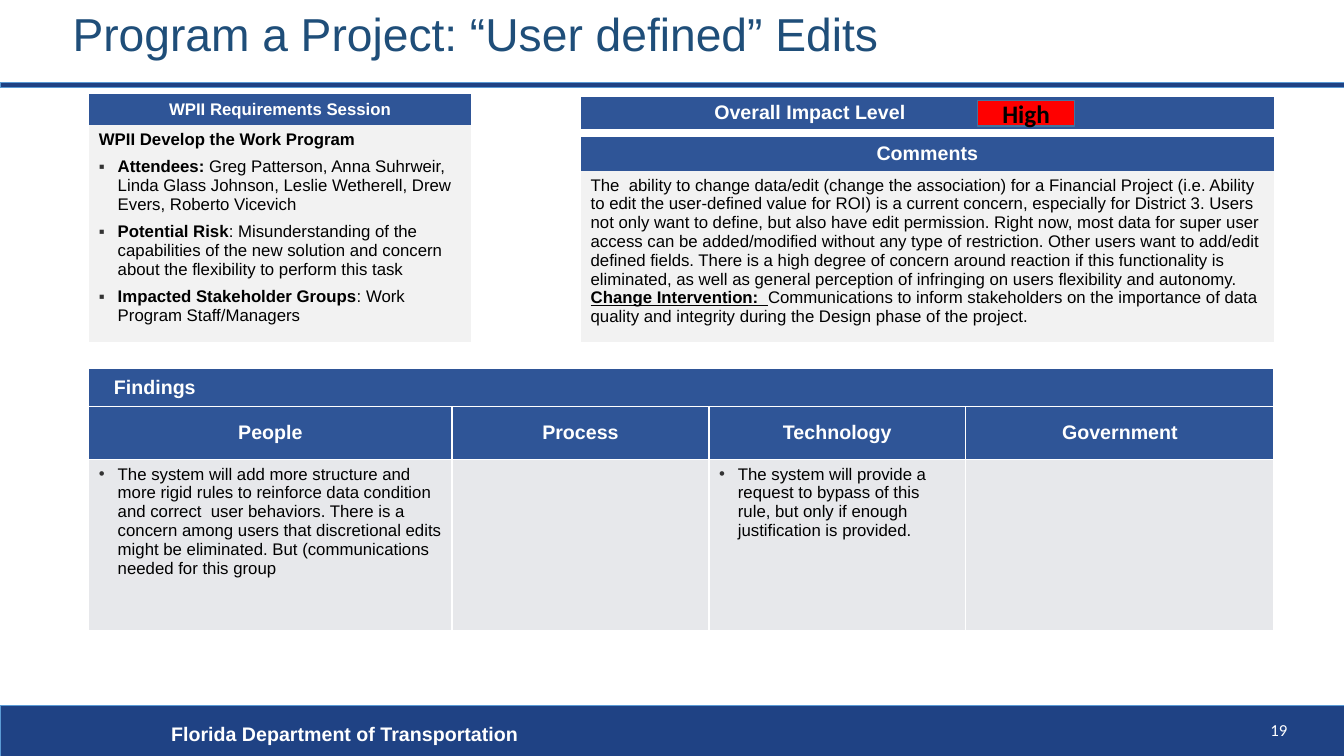
from lxml.etree import SubElement
from pptx import Presentation
from pptx.dml.color import RGBColor
from pptx.enum.shapes import MSO_SHAPE
from pptx.enum.text import MSO_ANCHOR, MSO_AUTO_SIZE, PP_ALIGN
from pptx.oxml import parse_xml
from pptx.oxml.ns import nsdecls, qn
from pptx.util import Pt

# Content
TITLE = "Program a Project: “User defined” Edits"
FOOTER, PAGE_NUMBER = "Florida Department of Transportation", "19"
IMPACT_LABEL, IMPACT_LEVEL = "Overall Impact Level", "High"
SESSION_HEAD = "WPII Requirements Session"
SESSION_TOPIC = "WPII Develop the Work Program"
SESSION_POINTS = [
    ("Attendees: ", "Greg Patterson, Anna Suhrweir, Linda Glass Johnson, Leslie Wetherell, "
     "Drew Evers, Roberto Vicevich"),
    ("Potential Risk", ": Misunderstanding of the capabilities of the new solution and concern "
     "about the flexibility to perform this task"),
    ("Impacted Stakeholder Groups", ": Work Program Staff/Managers"),
]
COMMENTS_HEAD = "Comments"
CONCERN = (
    "The  ability to change data/edit (change the association) for a Financial Project (i.e. "
    "Ability to edit the user-defined value for ROI) is a current concern, especially for "
    "District 3. Users not only want to define, but also have edit permission. Right now, most "
    "data for super user access can be added/modified without any type of restriction. Other "
    "users want to add/edit defined fields. There is a high degree of concern around reaction if "
    "this functionality is eliminated, as well as general perception of infringing on users "
    "flexibility and autonomy. ")
INTERVENTION_LABEL = "Change Intervention:  "
INTERVENTION = ("Communications to inform stakeholders on the importance of data quality and "
                "integrity during the Design phase of the project.")
FINDINGS_HEAD = "Findings"
FINDINGS = {
    "People": "The system will add more structure and more rigid rules to reinforce data "
              "condition and correct  user behaviors. There is a concern among users that "
              "discretional edits might be eliminated. But (communications needed for this group",
    "Process": "",
    "Technology": "The system will provide a request to bypass of this rule, but only if enough "
                  "justification is provided.",
    "Government": "",
}

# Formats
NAVY, BLUE, LIGHT, GREY = "1F4284", "2F5597", "F2F2F2", "E7E8EB"
HEAD = {"size": Pt(14), "name": "Arial", "bold": True, "color": "FFFFFF"}
SMALL_HEAD = {**HEAD, "size": Pt(12)}
BODY = {"size": Pt(12), "name": "Arial", "bold": False, "color": "000000"}
STRONG = {**BODY, "bold": True}
NO_STYLE = "{2D5ABB26-0587-4C30-8999-92F81FD0307C}"
LEFT, MIDDLE, RIGHT = 63.4, 414.7, 910.1
INDENT = Pt(13.5)


def paint(color_format, hex_color):
    color_format.rgb = RGBColor.from_string(hex_color)


def fill(target, hex_color):
    target.fill.solid()
    paint(target.fill.fore_color, hex_color)


def write(para, spans, align=PP_ALIGN.LEFT, after=0):
    para.alignment, para.space_after = align, Pt(after)
    for text, style in spans:
        span = para.add_run()
        span.text = text
        for key, value in style.items():
            if key == "color":
                paint(span.font.color, value)
            else:
                setattr(span.font, key, value)


def add_bullet(para, mark):
    props = para._p.get_or_add_pPr()
    props.set("marL", str(INDENT))
    props.set("indent", str(-INDENT))
    color = SubElement(props, qn("a:buClr"))
    SubElement(color, qn("a:srgbClr"), val="333333")
    SubElement(props, qn("a:buFont"), typeface="Arial")
    SubElement(props, qn("a:buChar"), char=mark)


def add_bar(page, left, top, width, height, color, line, line_width):
    bar = page.shapes.add_shape(MSO_SHAPE.RECTANGLE, Pt(left), Pt(top), Pt(width), Pt(height))
    bar.shadow.inherit = False
    fill(bar, color)
    paint(bar.line.color, line)
    bar.line.width = Pt(line_width)
    return bar


def add_label(page, left, top, width, height, text, style, align):
    box = page.shapes.add_textbox(Pt(left), Pt(top), Pt(width), Pt(height))
    box.text_frame.word_wrap = True
    write(box.text_frame.paragraphs[0], [(text, style)], align)


def add_grid(page, left, top, columns, rows):
    frame = page.shapes.add_table(len(rows), len(columns), Pt(left), Pt(top),
                                  Pt(sum(columns)), Pt(sum(rows)))
    grid = frame.table
    grid.first_row = grid.horz_banding = False
    grid._tbl.tblPr.find(qn("a:tableStyleId")).text = NO_STYLE
    for column, width in zip(grid.columns, columns):
        column.width = Pt(width)
    for row, height in zip(grid.rows, rows):
        row.height = Pt(height)
    return grid


def set_head(cell, text, style=HEAD, align=PP_ALIGN.CENTER):
    fill(cell, BLUE)
    cell.vertical_anchor = MSO_ANCHOR.MIDDLE
    cell.margin_top = cell.margin_bottom = Pt(2)
    para = cell.text_frame.paragraphs[0]
    if text:
        write(para, [(text, style)], align)
    else:
        SubElement(para._p, qn("a:endParaRPr"), sz="1200")


def add_borders(cell):
    props = cell._tc.get_or_add_tcPr()
    for place, side in enumerate(("lnL", "lnR", "lnT", "lnB")):
        props.insert(place, parse_xml(
            f'<a:{side} {nsdecls("a")} w="12700"><a:solidFill><a:srgbClr val="FFFFFF"/>'
            f'</a:solidFill></a:{side}>'))


deck = Presentation()
deck.slide_width, deck.slide_height = Pt(960), Pt(540)
page = deck.slides.add_slide(deck.slide_layouts[5])

# Title, rule and footer
add_bar(page, 0, 504, 960, 36, NAVY, "5B9BD5", 0.5)
add_bar(page, 0, 59, 960, 3.6, NAVY, "5B9BD5", 0.5)
add_label(page, 115.2, 512, 574.6, 24.5, FOOTER, HEAD, PP_ALIGN.LEFT)
add_label(page, 845.3, 510.5, 81.4, 21.6, PAGE_NUMBER,
          {"size": Pt(12), "name": "Calibri", "color": "FFFFFF"}, PP_ALIGN.RIGHT)
title = page.shapes.title
title.left, title.top, title.width, title.height = Pt(44.6), Pt(0), Pt(747.4), Pt(51.8)
title.text_frame.vertical_anchor = MSO_ANCHOR.MIDDLE
title.text_frame.auto_size = MSO_AUTO_SIZE.NONE
title.text_frame.paragraphs[0].line_spacing = 0.9
write(title.text_frame.paragraphs[0],
      [(TITLE, {"size": Pt(33), "name": "Arial", "color": "1F4E79"})])

# Comments
comments = add_grid(page, MIDDLE, 98, [RIGHT - MIDDLE], [24, 122])
set_head(comments.cell(0, 0), COMMENTS_HEAD)
comment = comments.cell(1, 0)
fill(comment, LIGHT)
write(comment.text_frame.paragraphs[0],
      [(CONCERN, BODY), (INTERVENTION_LABEL, {**STRONG, "underline": True}),
       (INTERVENTION, BODY)], after=6)

# Findings
findings = add_grid(page, LEFT, 262.8, [259.5, 183.5, 183.5, 220.2], [27.6, 38, 122.4])
set_head(findings.cell(0, 0), FINDINGS_HEAD, align=PP_ALIGN.LEFT)
findings.cell(0, 0).margin_left = Pt(18)
findings.cell(0, 0).merge(findings.cell(0, 3))
for column, (area, finding) in enumerate(FINDINGS.items()):
    set_head(findings.cell(1, column), area)
    cell = findings.cell(2, column)
    fill(cell, GREY)
    if finding:
        para = cell.text_frame.paragraphs[0]
        write(para, [(finding, BODY)], after=8)
        add_bullet(para, "•")
for cell in findings.iter_cells():
    add_borders(cell)

# Requirements session
session = add_grid(page, LEFT, 67.2, [273.4], [22.3, 145.5])
set_head(session.cell(0, 0), SESSION_HEAD, SMALL_HEAD)
fill(session.cell(1, 0), LIGHT)
notes = session.cell(1, 0).text_frame
write(notes.paragraphs[0], [(SESSION_TOPIC, STRONG)], after=6)
for label, detail in SESSION_POINTS:
    para = notes.add_paragraph()
    write(para, [(label, STRONG), (detail, BODY)], after=6)
    add_bullet(para, "▪")

# Impact level
impact = add_grid(page, MIDDLE, 69.2, [327.6, 167.8], [23])
set_head(impact.cell(0, 0), IMPACT_LABEL)
set_head(impact.cell(0, 1), "")
badge = add_bar(page, 698.4, 72, 69.1, 18, "FF0000", "43739E", 1)
badge.text_frame.vertical_anchor = MSO_ANCHOR.MIDDLE
write(badge.text_frame.paragraphs[0],
      [(IMPACT_LEVEL, {"size": Pt(18), "name": "Calibri", "bold": True, "color": "000000"})],
      PP_ALIGN.CENTER)

deck.save("out.pptx")
